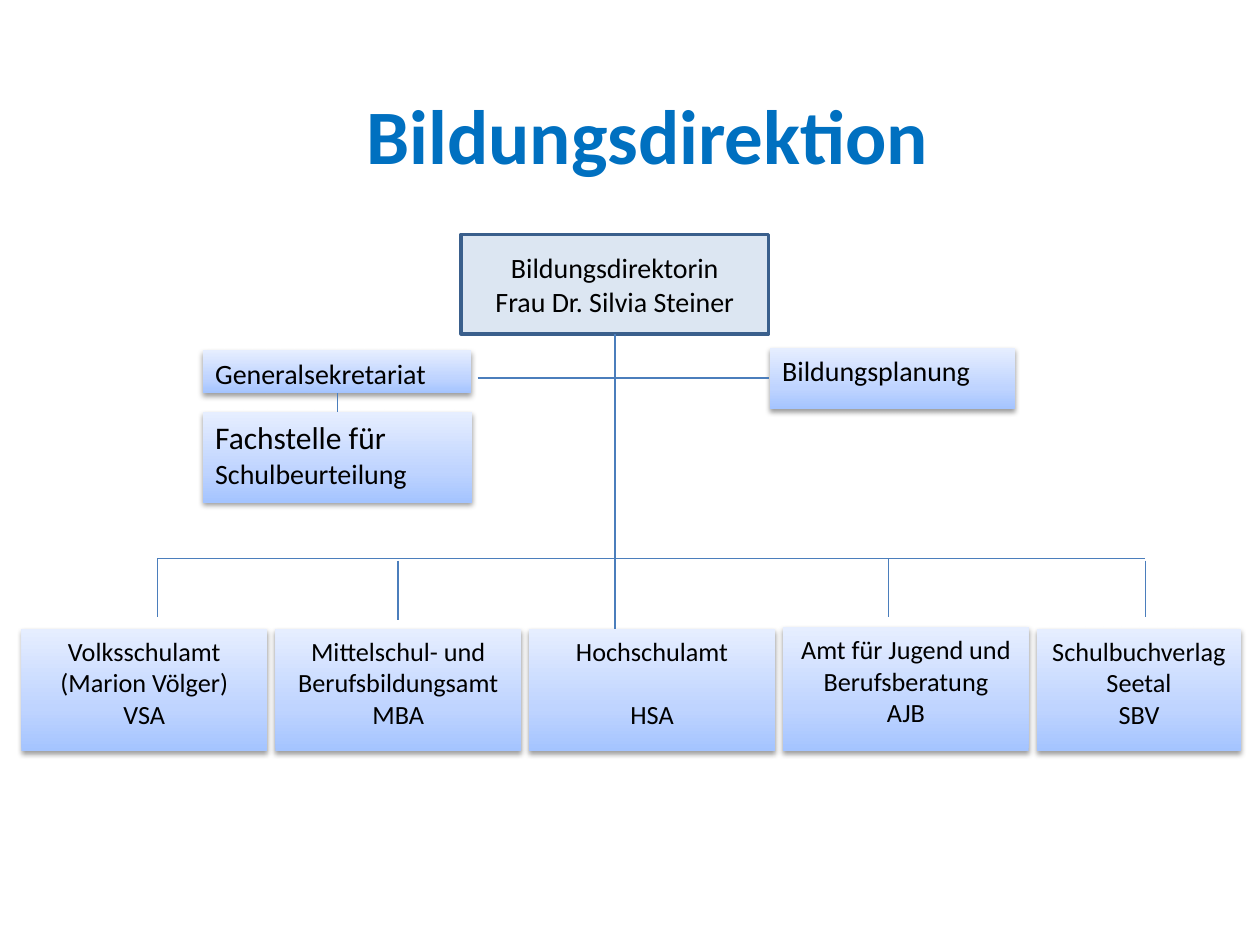
from lxml.etree import SubElement
from pptx import Presentation
from pptx.dml.color import RGBColor
from pptx.enum.shapes import MSO_CONNECTOR, MSO_SHAPE
from pptx.enum.text import MSO_ANCHOR as ANCHOR, PP_ALIGN as ALIGN
from pptx.oxml.ns import qn
from pptx.util import Inches, Pt

FONT = "Calibri"
BLUE_STOPS = [(0, "A4C4FF"), (35, "BFD4FF"), (100, "E6EEFF")]
OFFICE_LEFT, OFFICE_TOP = 0.17, 4.99
OFFICE_STEP = (8.23 - OFFICE_LEFT) / 4
OFFICE_WIDTH, OFFICE_HEIGHT = 1.95, 0.97
TRUNK_X, STAFF_Y, BUS_Y = 4.88, 3, 4.43

# Paragraphs of each office; the number is the space before the last one.
OFFICES = [
    (["Volksschulamt", "(Marion Völger)", "VSA"], 0),
    (["Mittelschul- und", "Berufsbildungsamt", "MBA"], 0),
    (["Hochschulamt", "HSA"], 18.3),
    (["Amt für Jugend und Berufsberatung", "AJB"], 0),
    (["Schulbuchverlag Seetal", "SBV"], 0),
]


def color(value):
    return RGBColor.from_string(value)


def style(para, size, align, value="000000", bold=False):
    para.alignment = align
    font = para.font
    font.name, font.size, font.bold = FONT, Pt(size), bold
    font.color.rgb = color(value)


def add_title(page, text):
    title = page.shapes.title
    title.left, title.top = Inches(0.89), Inches(0.26)
    title.width, title.height = Inches(8.5), Inches(1.61)
    title.text_frame.text = text
    title.text_frame.vertical_anchor = ANCHOR.MIDDLE
    style(title.text_frame.paragraphs[0], 44, ALIGN.CENTER, "0070C0", True)


def add_box(page, area, lines, size, align, anchor=ANCHOR.TOP):
    box = page.shapes.add_shape(MSO_SHAPE.RECTANGLE, *map(Inches, area))
    box.shadow.inherit = False
    frame = box.text_frame
    frame.word_wrap = True
    frame.vertical_anchor = anchor
    frame.text = "\n".join(lines)
    for para in frame.paragraphs:
        style(para, size, align)
    return box


def add_gradient_box(page, area, lines, size=16, align=ALIGN.LEFT):
    box = add_box(page, area, lines, size, align)
    box.line.fill.background()
    box.fill.gradient()
    box.fill.gradient_angle = 90
    properties = box._element.spPr
    stops = properties.find(qn("a:gradFill")).find(qn("a:gsLst"))
    for stop in list(stops):
        stops.remove(stop)
    for position, value in BLUE_STOPS:
        stop = SubElement(stops, qn("a:gs"), pos=str(position * 1000))
        SubElement(stop, qn("a:srgbClr"), val=value)
    shadow = SubElement(
        properties.find(qn("a:effectLst")), qn("a:outerShdw"),
        blurRad=str(Pt(3.1)), dist=str(Pt(1.6)), dir="5400000", rotWithShape="0")
    black = SubElement(shadow, qn("a:srgbClr"), val="000000")
    SubElement(black, qn("a:alpha"), val="38000")
    return box


def add_line(page, *ends):
    line = page.shapes.add_connector(MSO_CONNECTOR.STRAIGHT, *map(Inches, ends))
    line.line.color.rgb = color("4B7EBC")
    line.line.width = Pt(0.75)
    SubElement(line._element.spPr, qn("a:effectLst"))


def add_director(page):
    box = add_box(page, (3.66, 1.86, 2.44, 0.79),
                  ["Bildungsdirektorin", "Frau Dr. Silvia Steiner"],
                  16, ALIGN.CENTER, ANCHOR.MIDDLE)
    box.fill.solid()
    box.fill.fore_color.rgb = color("DCE6F2")
    box.line.color.rgb = color("3A5F8C")
    box.line.width = Pt(2)


def add_staff(page):
    add_gradient_box(page, (1.61, 2.78, 2.13, 0.34), ["Generalsekretariat"])
    add_gradient_box(page, (6.11, 2.76, 1.95, 0.49), ["Bildungsplanung"])
    unit = add_gradient_box(page, (1.61, 3.27, 2.14, 0.72), ["Fachstelle für "])
    para = unit.text_frame.paragraphs[0]
    para.runs[0].font.size = Pt(18)
    para.add_run().text = "Schulbeurteilung"


def add_offices(page):
    for column, (lines, gap) in enumerate(OFFICES):
        is_last = column == len(OFFICES) - 1
        width = 1.62 if is_last else OFFICE_WIDTH
        raised = 0.01 if column == 3 else 0
        area = (OFFICE_LEFT + column * OFFICE_STEP, OFFICE_TOP - raised,
                width, OFFICE_HEIGHT + raised)
        box = add_gradient_box(page, area, lines, 15, ALIGN.CENTER)
        box.text_frame.paragraphs[-1].space_before = Pt(gap)


def add_lines(page):
    add_line(page, TRUNK_X, 2.65, TRUNK_X, OFFICE_TOP)
    add_line(page, 3.79, STAFF_Y, 6.1, STAFF_Y)
    add_line(page, 1.25, BUS_Y, 9.09, BUS_Y)
    add_line(page, 2.68, 3.12, 2.68, 3.27)
    for x, top, bottom in [(1.25, BUS_Y, 4.9), (3.16, 4.45, 4.92),
                           (7.05, BUS_Y, 4.9), (9.09, 4.45, 4.9)]:
        add_line(page, x, top, x, bottom)


def main():
    deck = Presentation()
    deck.slide_width, deck.slide_height = Inches(10), Inches(7.5)
    page = deck.slides.add_slide(deck.slide_layouts[0])
    subtitle = page.placeholders[1]._element
    subtitle.getparent().remove(subtitle)
    add_title(page, "Bildungsdirektion")
    add_director(page)
    add_staff(page)
    add_offices(page)
    add_lines(page)
    deck.save("out.pptx")


if __name__ == "__main__":
    main()
